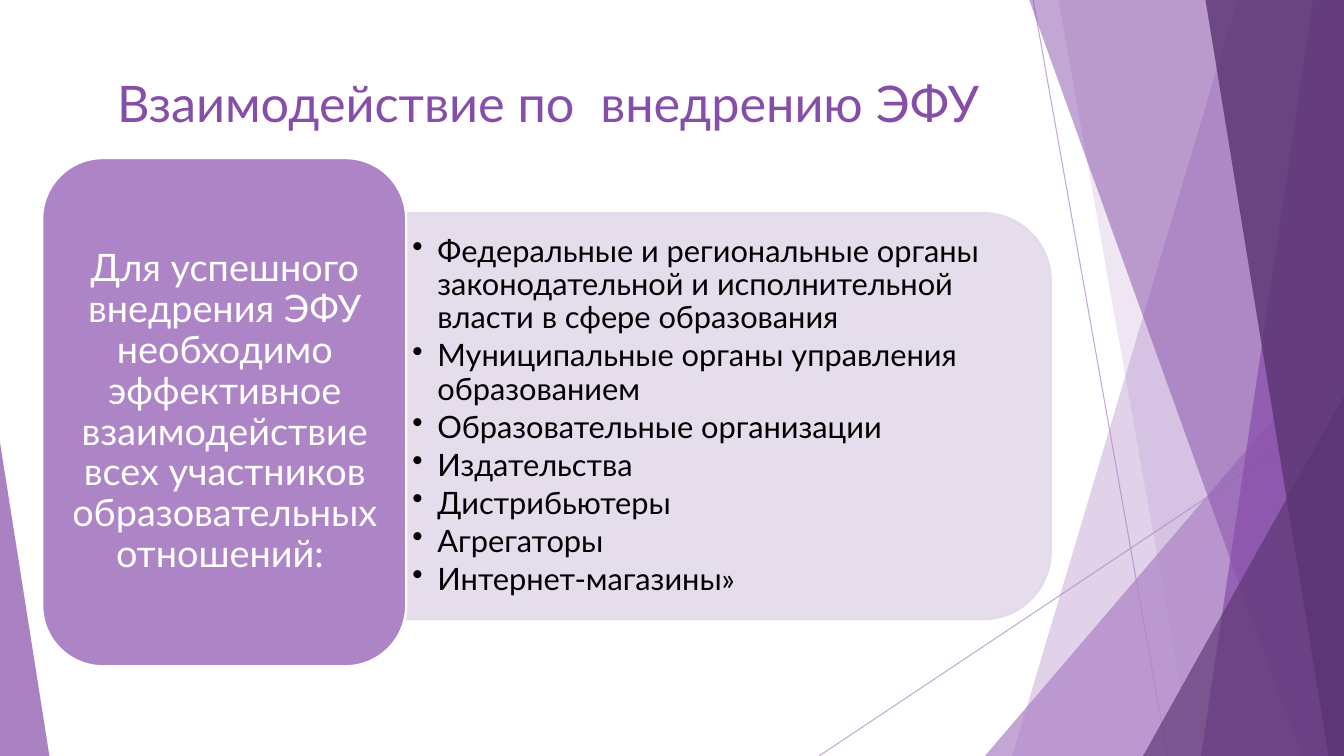
from lxml import etree
from pptx import Presentation
from pptx import util as u
from pptx.dml.color import RGBColor
from pptx.enum import shapes, text
from pptx.oxml.ns import qn

Pt = u.Pt
LILAC = RGBColor(0xAD, 0x84, 0xC6)
VIOLET = RGBColor(0x87, 0x4E, 0xA9)
PLUM = RGBColor(0x5A, 0x34, 0x71)
PALE = RGBColor(0xE3, 0xD9, 0xEA)
WHITE = RGBColor(0xFF, 0xFF, 0xFF)
BLACK = RGBColor(0, 0, 0)
FONT = "Lato"
WIDTH, HEIGHT = 960, 540

PARTICIPANTS = [
    "Федеральные и региональные органы законодательной и исполнительной "
    "власти в сфере образования",
    "Муниципальные органы управления образованием",
    "Образовательные организации",
    "Издательства",
    "Дистрибьютеры",
    "Агрегаторы",
    "Интернет-магазины»",
]
PURPOSE = ("Для успешного внедрения ЭФУ необходимо эффективное взаимодействие "
           "всех участников образовательных отношений: ")


def paint(fill, color, opacity=100):
    """Solid colour with opacity in percent."""
    fill.solid()
    fill.fore_color.rgb = color
    if opacity < 100:
        for node in fill._xPr.iter(qn("a:srgbClr")):
            etree.SubElement(node, qn("a:alpha")).set("val", str(opacity * 1000))


def finish(shape, color, opacity=100, outline=None):
    shape.shadow.inherit = False
    paint(shape.fill, color, opacity)
    if outline is None:
        shape.line.fill.background()
    else:
        shape.line.width = Pt(1.5)
        paint(shape.line.fill, outline, opacity)


def add_thin_line(page, start, end):
    line = page.shapes.add_connector(
        shapes.MSO_CONNECTOR.STRAIGHT, *map(Pt, start + end))
    line.line.width = Pt(0.75)
    paint(line.line.fill, LILAC, 70)
    etree.SubElement(line._element.spPr, qn("a:effectLst"))


def add_band(page, top_x, bottom_x, color, opacity):
    """Slanted band that reaches the right edge of the slide."""
    top = -0.6
    corners = [(WIDTH, top), (WIDTH, HEIGHT), (bottom_x, HEIGHT)]
    outline = page.shapes.build_freeform(Pt(top_x), Pt(top))
    outline.add_line_segments([(Pt(x), Pt(y)) for x, y in corners], close=True)
    finish(outline.convert_to_shape(), color, opacity)


def add_panel(page, kind, frame, color, opacity=100, outline=None, peak=None):
    panel = page.shapes.add_shape(kind, *map(Pt, frame))
    if peak is not None:
        panel.adjustments[0] = peak
    finish(panel, color, opacity, outline)
    return panel


def add_bullet(para):
    props = para._p.get_or_add_pPr()
    props.set("marL", str(Pt(18)))
    props.set("indent", str(-Pt(18)))
    etree.SubElement(props, qn("a:buChar")).set("char", "•")


def add_text(page, frame, lines, size, color, anchor, margins=(7.2, 3.6),
             align=text.PP_ALIGN.CENTER, spacing=None, after=0, bullets=False):
    box = page.shapes.add_textbox(*map(Pt, frame)).text_frame
    box.word_wrap = True
    box.vertical_anchor = anchor
    box.margin_left = box.margin_right = Pt(margins[0])
    box.margin_top = box.margin_bottom = Pt(margins[1])
    for index, line in enumerate(lines):
        para = box.add_paragraph() if index else box.paragraphs[0]
        para.alignment = align
        para.space_after = Pt(after)
        if spacing:
            para.line_spacing = spacing
        if bullets:
            add_bullet(para)
        span = para.add_run()
        span.text = line
        span.font.name = FONT
        span.font.size = Pt(size)
        span.font.color.rgb = color


def add_backdrop(page):
    triangle = shapes.MSO_SHAPE.ISOSCELES_TRIANGLE
    add_thin_line(page, (738, 0), (834, HEIGHT))
    add_thin_line(page, (WIDTH, 290), (585, HEIGHT))
    add_band(page, 884, 723, LILAC, 36)
    add_band(page, 756, 852, LILAC, 20)
    add_panel(page, triangle, (703.5, 240, 256.5, 300), LILAC, 72, peak=1)
    add_band(page, 735, 929.5, VIOLET, 50)
    add_band(page, 938, 858, VIOLET, 70)
    add_band(page, 861, 949, PLUM, 80)
    add_panel(page, triangle, (816.5, 283, 143.5, 257), PLUM, 66, peak=1)
    add_panel(page, triangle, (0, 316, 35.3, 224), VIOLET, 70, peak=0)


def main():
    deck = Presentation()
    deck.slide_width, deck.slide_height = Pt(WIDTH), Pt(HEIGHT)
    page = deck.slides.add_slide(deck.slide_layouts[6])
    add_backdrop(page)

    # Title
    add_text(page, (53.3, 48.2, 676.8, 103.7),
             ["Взаимодействие по  внедрению ЭФУ"], 36, VIOLET,
             text.MSO_ANCHOR.TOP)

    # Participants
    panel = add_panel(page, shapes.MSO_SHAPE.ROUND_2_SAME_RECTANGLE,
                      (374.4, 66.2, 290.2, 462.2), PALE, 90, PALE)
    panel.rotation = 90
    add_text(page, (288, 166.3, 447.8, 262.1), PARTICIPANTS, 22, BLACK,
             text.MSO_ANCHOR.MIDDLE, margins=(6.5, 3.6),
             align=text.PP_ALIGN.LEFT, spacing=0.9, after=3.4, bullets=True)

    # Purpose
    add_panel(page, shapes.MSO_SHAPE.ROUNDED_RECTANGLE,
              (30.2, 113, 259.9, 362.9), LILAC, outline=WHITE)
    add_text(page, (43.2, 126, 234.7, 337), [PURPOSE], 27, WHITE,
             text.MSO_ANCHOR.MIDDLE, margins=(7.9, 4.3), spacing=0.9)

    deck.save("out.pptx")


if __name__ == "__main__":
    main()
